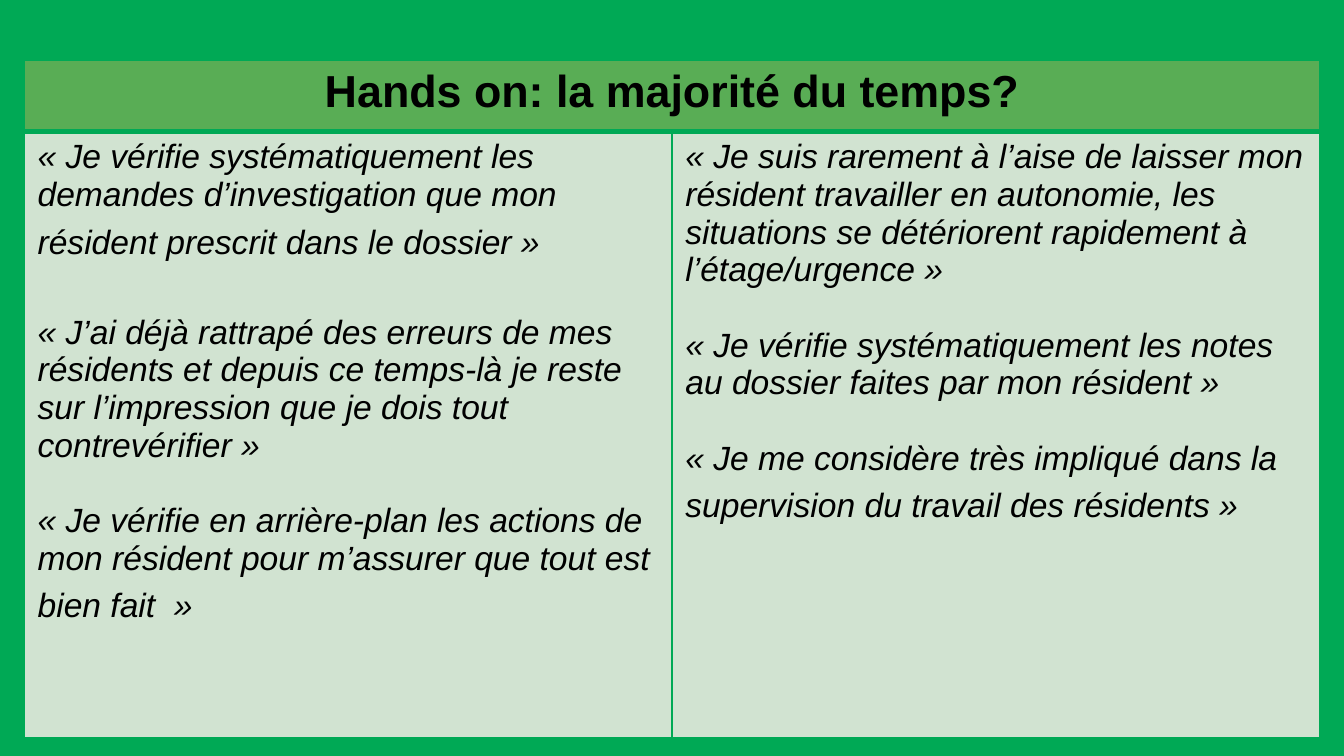
from lxml import etree
from pptx import Presentation
from pptx import util as u
from pptx.dml.color import RGBColor
from pptx.enum import text
from pptx.oxml import ns

WIDTH = 10
HEIGHT = WIDTH * 9 / 16
LEFT, TOP = 0.18, 0.45
COLUMN = 4.82
ROWS = (0.53, 4.51)
FONT = "Arial"
BODY, LARGE = 18, 24
LINE_HEIGHT = 1.12  # Arial line height as a share of the font size
COLORS = {"page": "00A955", "header": "59AD55", "body": "D1E3D1", "ink": "000000"}

TITLE = "Hands on: la majorité du temps?"
# Each quote: wording, gap before in points, whether a large space ends it
QUOTES = (
    (
        ("« Je vérifie systématiquement les demandes d’investigation que mon "
         "résident prescrit dans le dossier »", 0, True),
        ("« J’ai déjà rattrapé des erreurs de mes résidents et depuis ce temps-là "
         "je reste sur l’impression que je dois tout contrevérifier »",
         LARGE * LINE_HEIGHT, False),
        ("« Je vérifie en arrière-plan les actions de mon résident pour m’assurer "
         "que tout est bien fait  »", BODY * LINE_HEIGHT, True),
    ),
    (
        ("« Je suis rarement à l’aise de laisser mon résident travailler en "
         "autonomie, les situations se détériorent rapidement à l’étage/urgence »",
         0, False),
        ("« Je vérifie systématiquement les notes au dossier faites par mon "
         "résident »", BODY * LINE_HEIGHT, False),
        ("« Je me considère très impliqué dans la supervision du travail des "
         "résidents »", BODY * LINE_HEIGHT, True),
    ),
)


def color(name):
    return RGBColor.from_string(COLORS[name])


def add_span(para, wording, size, bold=False, italic=False):
    span = para.add_run()
    span.text = wording
    span.font.name = FONT
    span.font.size = u.Pt(size)
    span.font.bold = bold
    span.font.italic = italic
    span.font.color.rgb = color("ink")


def style_cell(cell, fill, top=1, bottom=1):
    """Set the borders (widths in points), then the fill that must follow them."""
    properties = cell._tc.get_or_add_tcPr()
    for side, width in (("L", 1), ("R", 1), ("T", top), ("B", bottom)):
        line = etree.SubElement(properties, ns.qn(f"a:ln{side}"), w=str(u.Pt(width)))
        solid = etree.SubElement(line, ns.qn("a:solidFill"))
        etree.SubElement(solid, ns.qn("a:srgbClr"), val=COLORS["page"])
    cell.fill.solid()
    cell.fill.fore_color.rgb = color(fill)


def fill_header(table):
    header = table.cell(0, 0)
    header.merge(table.cell(0, 1))
    for column in range(2):
        style_cell(table.cell(0, column), "header", bottom=3)
    para = header.text_frame.paragraphs[0]
    para.alignment = text.PP_ALIGN.CENTER
    add_span(para, TITLE, LARGE, bold=True)


def fill_quotes(cell, quotes):
    style_cell(cell, "body", top=3)
    frame = cell.text_frame
    for index, (wording, gap, large_end) in enumerate(quotes):
        para = frame.add_paragraph() if index else frame.paragraphs[0]
        if gap:
            para.space_before = u.Pt(round(gap, 1))
        add_span(para, wording, BODY, italic=True)
        if large_end:
            add_span(para, " ", LARGE, italic=True)


def add_quote_table(page):
    table = page.shapes.add_table(
        2, 2, u.Inches(LEFT), u.Inches(TOP),
        u.Inches(2 * COLUMN), u.Inches(sum(ROWS))).table
    for column in table.columns:
        column.width = u.Inches(COLUMN)
    for row, height in zip(table.rows, ROWS):
        row.height = u.Inches(height)
    fill_header(table)
    for column, quotes in enumerate(QUOTES):
        fill_quotes(table.cell(1, column), quotes)


def main():
    deck = Presentation()
    deck.slide_width, deck.slide_height = u.Inches(WIDTH), u.Inches(HEIGHT)

    # Blank layout: the heading belongs to the table
    page = deck.slides.add_slide(deck.slide_layouts[6])
    page.background.fill.solid()
    page.background.fill.fore_color.rgb = color("page")

    add_quote_table(page)
    deck.save("out.pptx")


if __name__ == "__main__":
    main()
